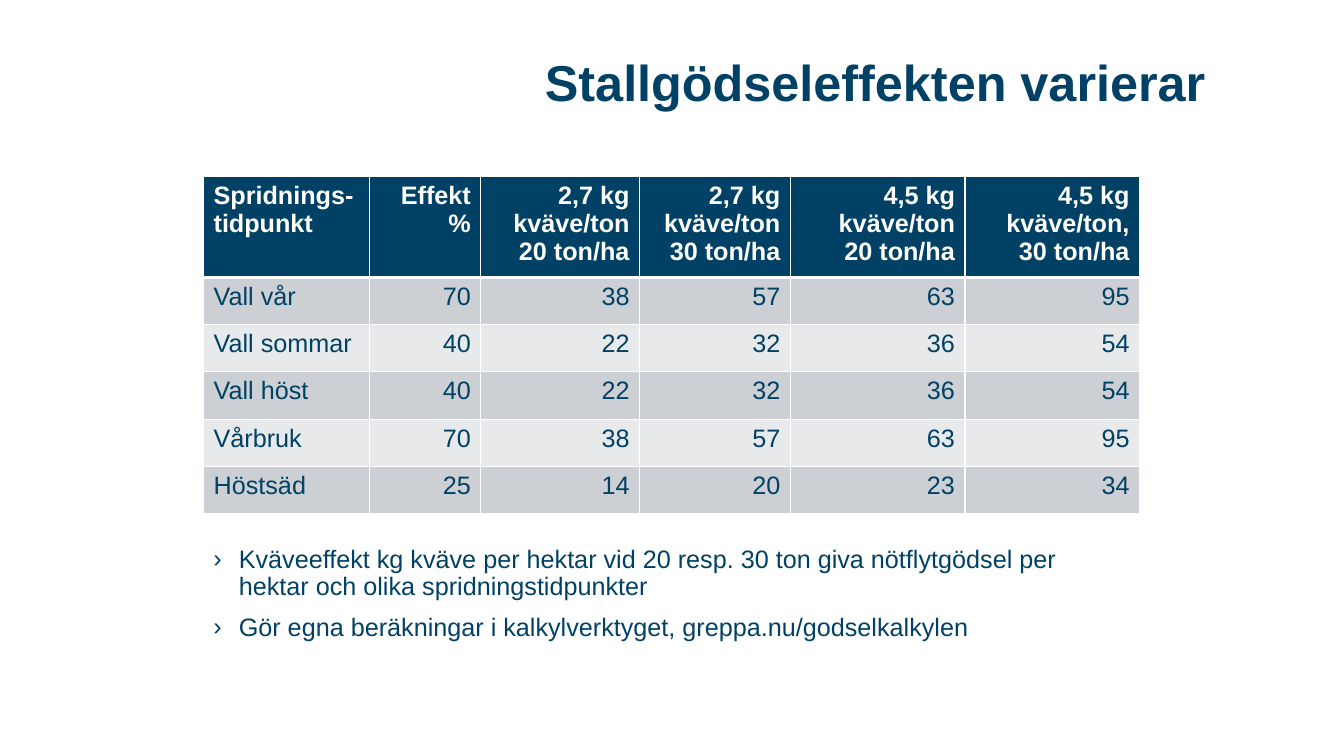
import pptx
import pptx.dml.color
import pptx.enum.text
import pptx.oxml
import pptx.oxml.ns
import pptx.util

Cm = pptx.util.Cm
Pt = pptx.util.Pt
ALIGN = pptx.enum.text.PP_ALIGN
ANCHOR = pptx.enum.text.MSO_ANCHOR

FONT = "Arial"
COLORS = {"navy": "004165", "white": "FFFFFF", "band": "CCCFD3", "light": "E7E9EA"}

HEADERS = [
    "Spridnings-tidpunkt",
    "Effekt %",
    "2,7 kg kväve/ton\n20 ton/ha",
    "2,7 kg kväve/ton\n30 ton/ha",
    "4,5 kg kväve/ton\n20 ton/ha",
    "4,5 kg kväve/ton,\n30 ton/ha",
]
ROWS = [
    ["Vall vår", 70, 38, 57, 63, 95],
    ["Vall sommar", 40, 22, 32, 36, 54],
    ["Vall höst", 40, 22, 32, 36, 54],
    ["Vårbruk", 70, 38, 57, 63, 95],
    ["Höstsäd", 25, 14, 20, 23, 34],
]
COL_WIDTHS = [4.19, 2.8, 4, 3.8, 4.4, 4.4]
HEADER_HEIGHT, ROW_HEIGHT = 2.36, 1.19
BULLETS = [
    "Kväveeffekt kg kväve per hektar vid 20 resp. 30 ton giva nötflytgödsel "
    "per hektar och olika spridningstidpunkter",
    "Gör egna beräkningar i kalkylverktyget, greppa.nu/godselkalkylen",
]


def rgb(name):
    return pptx.dml.color.RGBColor.from_string(COLORS[name])


def xml(tag, attrs, children=""):
    return pptx.oxml.parse_xml(
        f"<a:{tag} {pptx.oxml.ns.nsdecls('a')} {attrs}>{children}</a:{tag}>")


def solid(name):
    return f'<a:solidFill><a:srgbClr val="{COLORS[name]}"/></a:solidFill>'


def style_runs(p, size, color, bold=False):
    for r in p.runs:
        r.font.name = FONT
        r.font.size = Pt(size)
        r.font.bold = bold
        r.font.color.rgb = rgb(color)


def add_box(s, left, top, width, height):
    tf = s.shapes.add_textbox(Cm(left), Cm(top), Cm(width), Cm(height)).text_frame
    tf.word_wrap = True
    return tf


def add_title(s, text):
    tf = add_box(s, 4.22, 0.84, 26.42, 2.64)
    tf.vertical_anchor = ANCHOR.MIDDLE
    tf.text = text
    p = tf.paragraphs[0]
    p.alignment = ALIGN.RIGHT
    p.line_spacing = 0.9
    style_runs(p, 36, "navy", True)


def fill_cell(cell, text, fill, color, align, header):
    cell.text = text
    for p in cell.text_frame.paragraphs:
        p.alignment = align
        style_runs(p, 18, color, header)
    # White borders, thicker below the header
    for side in "LRTB":
        width = Pt(3 if header and side == "B" else 1)
        cell._tc.get_or_add_tcPr().append(xml(f"ln{side}", f'w="{width}"', solid("white")))
    cell.fill.solid()
    cell.fill.fore_color.rgb = rgb(fill)


def add_effect_table(s):
    height = HEADER_HEIGHT + ROW_HEIGHT * len(ROWS)
    table = s.shapes.add_table(len(ROWS) + 1, len(HEADERS), Cm(5.13), Cm(4.45),
                               Cm(sum(COL_WIDTHS)), Cm(height)).table
    for column, width in zip(table.columns, COL_WIDTHS):
        column.width = Cm(width)
    for i, values in enumerate([HEADERS] + ROWS):
        header = i == 0
        table.rows[i].height = Cm(HEADER_HEIGHT if header else ROW_HEIGHT)
        fill = "navy" if header else "band" if i % 2 else "light"
        for j, value in enumerate(values):
            fill_cell(table.cell(i, j), str(value), fill, "white" if header else "navy",
                      ALIGN.RIGHT if j else ALIGN.LEFT, header)


def add_bullets(s, items):
    tf = add_box(s, 5.13, 13.64, 21.95, 3.05)
    tf.text = "\n".join(items)
    for i, p in enumerate(tf.paragraphs):
        p.line_spacing = 0.9
        p.space_before = Pt(10 if i else 0)
        pPr = p._p.get_or_add_pPr()
        pPr.set("marL", str(Cm(0.64)))
        pPr.set("indent", str(-Cm(0.64)))
        pPr.append(xml("buClr", "", f'<a:srgbClr val="{COLORS["navy"]}"/>'))
        pPr.append(xml("buFont", f'typeface="{FONT}"'))
        pPr.append(xml("buChar", 'char="›"'))
        style_runs(p, 18, "navy")


def main():
    prs = pptx.Presentation()
    prs.slide_width, prs.slide_height = Cm(33.87), Cm(19.05)
    s = prs.slides.add_slide(prs.slide_layouts[6])
    add_title(s, "Stallgödseleffekten varierar")
    add_effect_table(s)
    add_bullets(s, BULLETS)
    prs.save("out.pptx")


if __name__ == "__main__":
    main()
